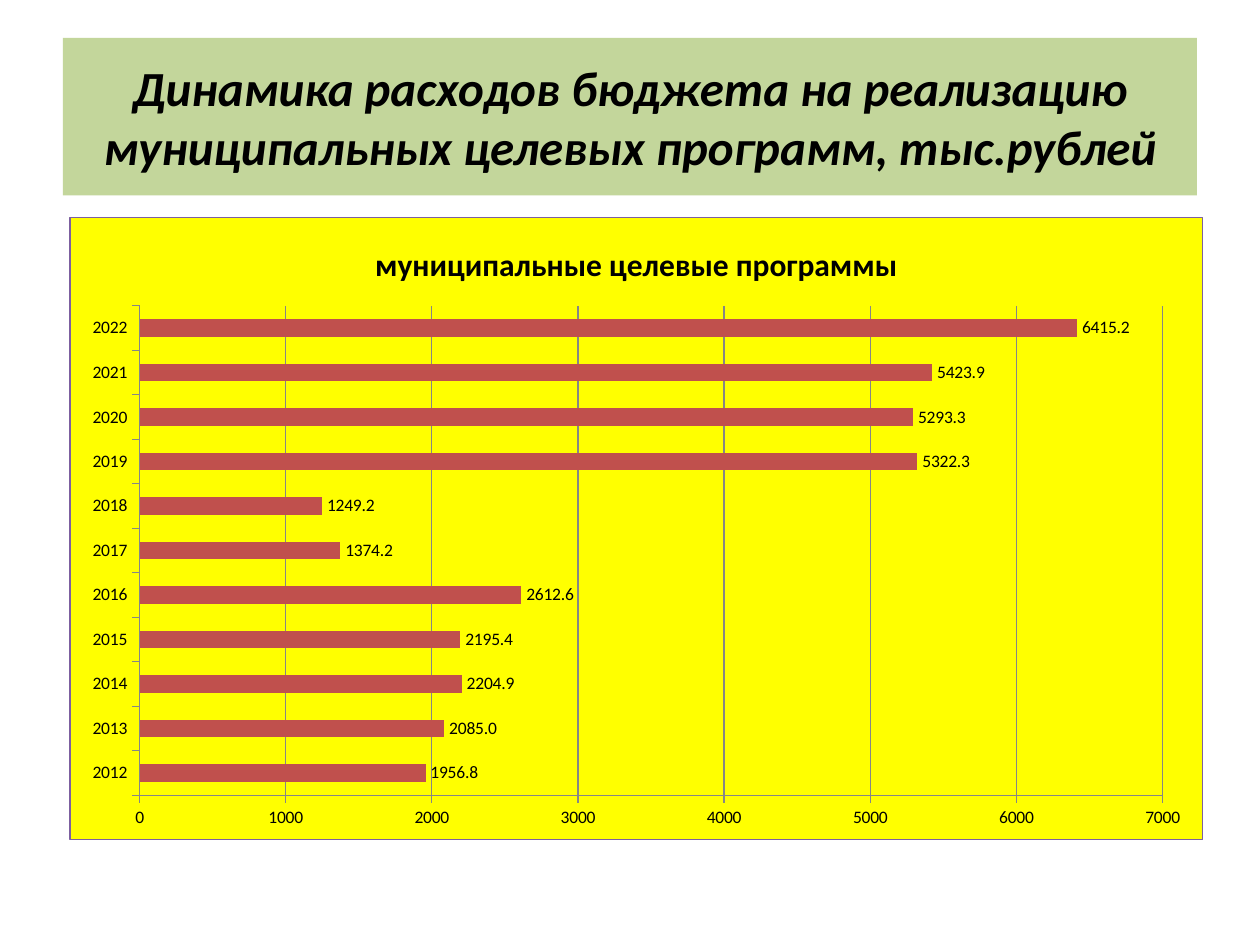
from lxml import etree
from pptx import Presentation
from pptx.chart.data import CategoryChartData
from pptx.dml.color import RGBColor
from pptx.enum.chart import XL_CHART_TYPE as CT, XL_LABEL_POSITION as LP, XL_TICK_MARK as TM
from pptx.enum.shapes import MSO_SHAPE
from pptx.enum.text import MSO_ANCHOR, PP_ALIGN
from pptx.oxml import parse_xml
from pptx.oxml.ns import nsdecls
from pptx.util import Inches, Pt

HEADING = "Динамика расходов бюджета на реализацию муниципальных целевых программ, тыс.рублей"
SERIES = "муниципальные целевые программы"
FIRST_YEAR = 2012
SPENDING = [1956.8, 2085.0, 2204.9, 2195.4, 2612.6, 1374.2,
            1249.2, 5322.3, 5293.3, 5423.9, 6415.2]
FONT = "Calibri"
BLACK, GREEN, YELLOW = "000000", "C3D69B", "FFFF00"
RED, PURPLE, GREY = "C0504D", "7D60A0", "868686"
HEADING_BOX = (0.5, 0.3, 9, 1.25)
CHART_BOX = (0.55, 1.72, 9, 4.95)


def rgb(value):
    return RGBColor.from_string(value)


def style(font, size, color=BLACK, bold=False, italic=False):
    font.name, font.size, font.bold, font.italic = FONT, Pt(size), bold, italic
    font.color.rgb = rgb(color)


def write(tf, text, align=PP_ALIGN.CENTER, **fmt):
    p = tf.paragraphs[0]
    p.alignment = align
    r = p.add_run()
    r.text = text
    style(r.font, **fmt)


def add_heading(s):
    sp = s.shapes.add_shape(MSO_SHAPE.RECTANGLE, *map(Inches, HEADING_BOX))
    sp.shadow.inherit = False
    sp.fill.solid()
    sp.fill.fore_color.rgb = rgb(GREEN)
    sp.line.fill.background()
    tf = sp.text_frame
    tf.word_wrap = True
    tf.vertical_anchor = MSO_ANCHOR.MIDDLE
    write(tf, HEADING, size=28, bold=True, italic=True)


def frame_chart(chart, fill, border):
    """Fill and outline the whole chart area."""
    space = chart.element
    sp_pr = parse_xml(
        f'<c:spPr {nsdecls("c", "a")}>'
        f'<a:solidFill><a:srgbClr val="{fill}"/></a:solidFill>'
        f'<a:ln w="{Pt(0.75)}"><a:solidFill><a:srgbClr val="{border}"/></a:solidFill></a:ln>'
        '</c:spPr>')
    space.find(etree.QName(space.nsmap["c"], "chart")).addnext(sp_pr)


def add_spending_chart(s):
    data = CategoryChartData(number_format="0.0")
    data.categories = [str(FIRST_YEAR + i) for i in range(len(SPENDING))]
    data.add_series(SERIES, SPENDING)
    chart = s.shapes.add_chart(CT.BAR_CLUSTERED, *map(Inches, CHART_BOX), data).chart
    style(chart.font, 10)
    frame_chart(chart, YELLOW, PURPLE)
    chart.has_legend = False
    chart.has_title = True
    write(chart.chart_title.text_frame, SERIES, size=18, bold=True)
    chart.chart_title.include_in_layout = False

    plot = chart.plots[0]
    plot.gap_width = 150
    plot.vary_by_categories = False
    bars = plot.series[0].format.fill
    bars.solid()
    bars.fore_color.rgb = rgb(RED)
    plot.has_data_labels = True
    labels = plot.data_labels
    labels.show_value = True
    labels.position = LP.OUTSIDE_END
    labels.number_format, labels.number_format_is_linked = "0.0", False

    values = chart.value_axis
    values.minimum_scale, values.maximum_scale, values.major_unit = 0, 7000, 1000
    values.has_major_gridlines = True
    values.tick_labels.number_format = "0"
    values.tick_labels.number_format_is_linked = False
    for axis in (values, chart.category_axis):
        axis.major_tick_mark = TM.OUTSIDE
        axis.format.line.color.rgb = rgb(GREY)
    values.major_gridlines.format.line.color.rgb = rgb(GREY)


prs = Presentation()
prs.slide_width, prs.slide_height = Inches(10), Inches(7.5)
s = prs.slides.add_slide(prs.slide_layouts[6])
add_heading(s)
add_spending_chart(s)
prs.save("out.pptx")
